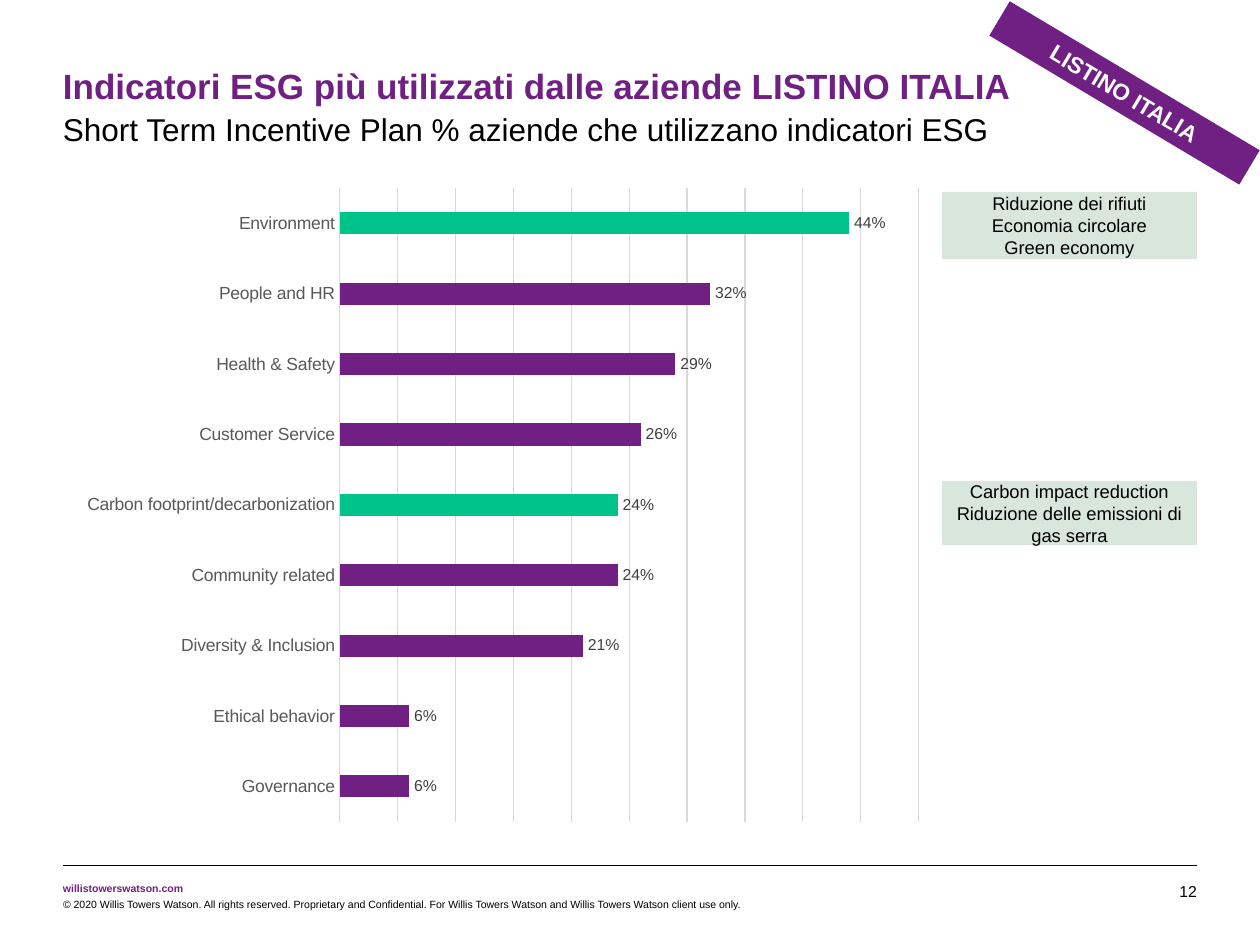
from lxml import etree
from pptx import Presentation
from pptx import util as u
from pptx.chart.data import CategoryChartData
from pptx.dml.color import RGBColor
from pptx.enum import chart as ch, shapes, text
from pptx.oxml import parse_xml
from pptx.oxml.ns import qn

PX = 914400 / 126
FONT = "Arial"
COLORS = {"purple": "702082", "green": "00C389", "mint": "D9E6DC", "black": "000000",
          "white": "FFFFFF", "grid": "D9D9D9", "category": "595959", "label": "404040"}
CENTER, LEFT, RIGHT = text.PP_ALIGN.CENTER, text.PP_ALIGN.LEFT, text.PP_ALIGN.RIGHT
TOP, MIDDLE, BOTTOM = (text.MSO_ANCHOR.TOP, text.MSO_ANCHOR.MIDDLE,
                       text.MSO_ANCHOR.BOTTOM)
MARKET = "LISTINO ITALIA"


def set_font(font, size, color, bold=False):
    for name, value in {"name": FONT, "size": u.Pt(size), "bold": bold}.items():
        setattr(font, name, value)
    font.color.rgb = RGBColor.from_string(COLORS[color])


def write(sp, lines, size, color, bold, align, anchor, side=0):
    """Fill a shape with one paragraph per line; side is the left and right inset in px."""
    tf = sp.text_frame
    frame = {"word_wrap": True, "vertical_anchor": anchor, "margin_top": 0,
             "margin_bottom": 0, "margin_left": int(side * PX),
             "margin_right": int(side * PX)}
    for name, value in frame.items():
        setattr(tf, name, value)
    for i, line in enumerate(lines):
        p = tf.add_paragraph() if i else tf.paragraphs[0]
        p.alignment = align
        r = p.add_run()
        r.text = line
        set_font(r.font, size, color, bold)


prs = Presentation()
prs.slide_width, prs.slide_height = u.Inches(10), u.Inches(7.5)
s = prs.slides.add_slide(prs.slide_layouts[6])

# Title, subtitle and footer
texts = [
    ((63, 64, 1134, 43), f"Indicatori ESG più utilizzati dalle aziende {MARKET}",
     20, "purple", True, LEFT, TOP),
    ((63, 110, 1134, 38), "Short Term Incentive Plan % aziende che utilizzano indicatori ESG",
     18, "black", False, LEFT, TOP),
    ((63, 882, 140, 13), "willistowerswatson.com", 6, "purple", True, LEFT, TOP),
    ((63, 898, 727, 13), "© 2020 Willis Towers Watson. All rights reserved. Proprietary and "
     "Confidential. For Willis Towers Watson and Willis Towers Watson client use only.",
     6, "black", False, LEFT, TOP),
    ((1144, 882, 53, 19), "12", 9, "black", False, RIGHT, BOTTOM),
]
for box, line, *style in texts:
    write(s.shapes.add_textbox(*(int(v * PX) for v in box)), [line], *style)

rule = s.shapes.add_connector(shapes.MSO_CONNECTOR.STRAIGHT,
                              *(int(v * PX) for v in (63, 865, 1197, 865)))
rule.line.width = u.Pt(0.25)
rule.line.color.rgb = RGBColor.from_string(COLORS["black"])
etree.SubElement(rule._element.spPr, qn("a:effectLst"))

# Bar chart, listed from the bottom bar up
indicators = {"Governance": 0.06, "Ethical behavior": 0.06, "Diversity & Inclusion": 0.21,
              "Community related": 0.24, "Carbon footprint/decarbonization": 0.24,
              "Customer Service": 0.26, "Health & Safety": 0.29, "People and HR": 0.32,
              "Environment": 0.44}
highlighted = ("Carbon footprint/decarbonization", "Environment")
data = CategoryChartData(number_format="0%")
data.categories = list(indicators)
data.add_series("Aziende", list(indicators.values()))
chart = s.shapes.add_chart(ch.XL_CHART_TYPE.BAR_CLUSTERED,
                           *(int(v * PX) for v in (72, 175, 864, 660)), data).chart
chart.has_legend = chart.has_title = False
set_font(chart.font, 10, "black")

cat = chart.category_axis
cat.major_tick_mark = cat.minor_tick_mark = ch.XL_TICK_MARK.NONE
cat.has_major_gridlines = False
set_font(cat.tick_labels.font, 10, "category")
val = chart.value_axis
for name, value in {"minimum_scale": 0, "maximum_scale": 0.5, "major_unit": 0.05,
                    "has_major_gridlines": True, "visible": False}.items():
    setattr(val, name, value)
for line in (cat.format.line, val.major_gridlines.format.line):
    line.width = u.Pt(0.75)
    line.color.rgb = RGBColor.from_string(COLORS["grid"])

plot = chart.plots[0]
plot.gap_width, plot.vary_by_categories = 219, False
series = plot.series[0]
series.invert_if_negative = False
series.format.fill.solid()
series.format.fill.fore_color.rgb = RGBColor.from_string(COLORS["purple"])
for i, name in enumerate(indicators):
    if name in highlighted:
        fill = series.points[i].format.fill
        fill.solid()
        fill.fore_color.rgb = RGBColor.from_string(COLORS["green"])
labels = series.data_labels
for name, value in {"show_value": True, "number_format": "0%",
                    "number_format_is_linked": False,
                    "position": ch.XL_LABEL_POSITION.OUTSIDE_END}.items():
    setattr(labels, name, value)
set_font(labels.font, 9, "label")

# Fixed plot area, as fractions of the chart
plot_area = chart._chartSpace.chart.plotArea
for old in plot_area.findall(qn("c:layout")):
    plot_area.remove(old)
parts = {"layoutTarget": "inner", "xMode": "edge", "yMode": "edge",
         "x": 0.31, "y": 0.02, "w": 0.67, "h": 0.96}
plot_area.insert(0, parse_xml(
    '<c:layout xmlns:c="http://schemas.openxmlformats.org/drawingml/2006/chart">'
    "<c:manualLayout>" + "".join(f'<c:{k} val="{v}"/>' for k, v in parts.items())
    + "</c:manualLayout></c:layout>"))

# Notes beside the highlighted bars, and the corner ribbon
panels = [
    ((942, 481, 255, 64), 0, "mint", ["Carbon impact reduction",
     "Riduzione delle emissioni di gas serra"], 10.5, "black", False),
    ((942, 192, 255, 67), 0, "mint", ["Riduzione dei rifiuti", "Economia circolare",
     "Green economy"], 10.5, "black", False),
    ((979, 73, 291, 40), 30.8, "purple", [MARKET], 13, "white", True),
]
for box, angle, fill, lines, size, color, bold in panels:
    sp = s.shapes.add_shape(shapes.MSO_SHAPE.RECTANGLE, *(int(v * PX) for v in box))
    sp.rotation = angle
    sp.shadow.inherit = False
    sp.fill.solid()
    sp.fill.fore_color.rgb = RGBColor.from_string(COLORS[fill])
    sp.line.fill.background()
    write(sp, lines, size, color, bold, CENTER, MIDDLE, 12)

prs.save("out.pptx")
